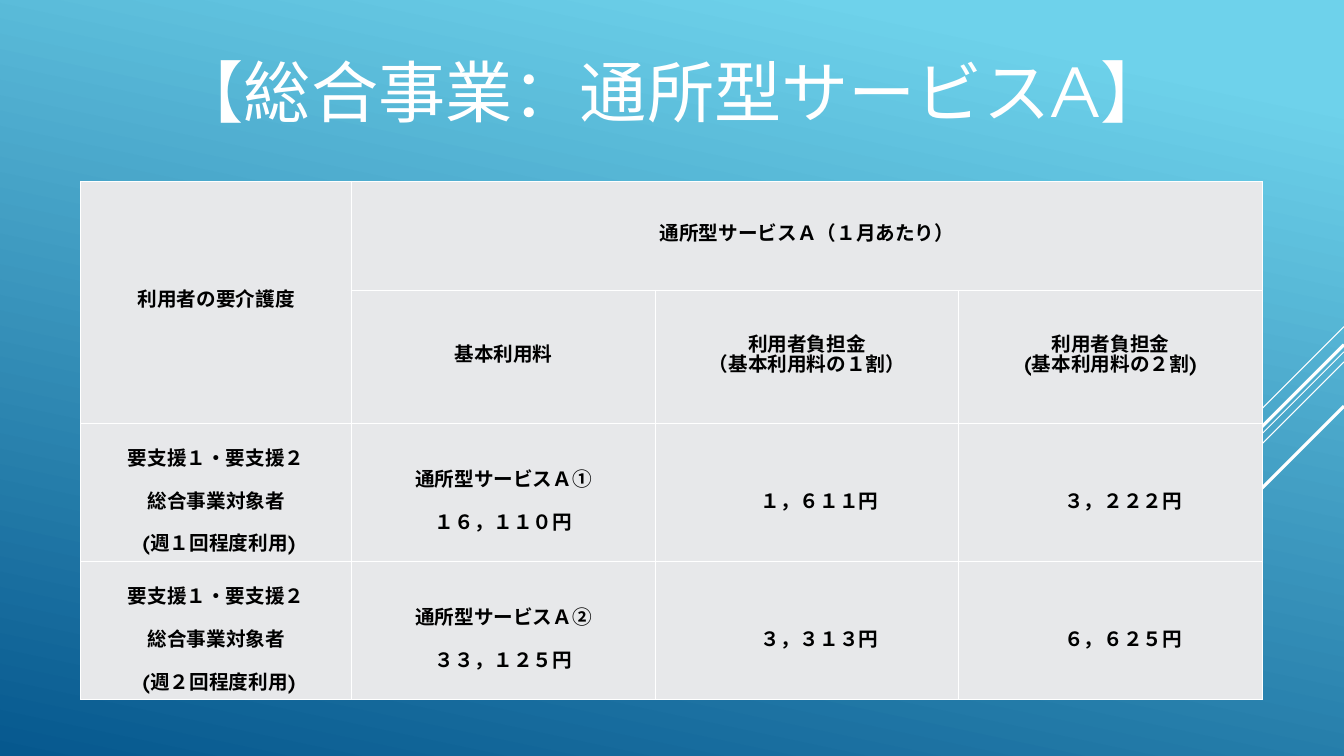
from dataclasses import dataclass

from lxml.etree import SubElement
from pptx import Presentation
from pptx.dml.color import RGBColor
from pptx.enum.shapes import MSO_CONNECTOR
from pptx.enum.text import MSO_ANCHOR, MSO_AUTO_SIZE, PP_ALIGN
from pptx.oxml.ns import qn
from pptx.util import Inches, Pt


@dataclass(frozen=True)
class Theme:
    font: str = "TeX Gyre Adventor"
    sky: str = "6ED2EB"
    ocean: str = "06588E"
    white: str = "FFFFFF"
    ink: str = "000000"
    cell: str = "E7E8EA"
    title_size: float = 48
    table_size: float = 14
    header_leading: float = 14.6
    body_leading: float = 1.5
    border_width: float = 1
    thin: float = 0.75
    thick: float = 2.25


THEME = Theme()
SLIDE_WIDTH, SLIDE_HEIGHT = 13.33, 7.5
COLUMN_WIDTHS = [2.69, 3.01, 3.01, 3.01]
ROW_HEIGHTS = [1.08, 1.32, 1.37, 1.37]
HEADER_ROWS = 2
AMOUNT_COLUMN = 2
CELL_INSET, AMOUNT_INSET = 0.04, 0.29

DIAGONALS = [
    (3.24, 1.00, THEME.thin),
    (3.49, 3.26, THEME.thin),
    (3.59, 2.07, THEME.thin),
    (3.42, 1.91, THEME.thick),
    (4.03, 1.39, THEME.thick),
]

ROWS = [
    ["利用者の要介護度", "通所型サービスＡ（１月あたり）", "", ""],
    ["", "基本利用料", "利用者負担金\n（基本利用料の１割）", "利用者負担金\n(基本利用料の２割)"],
    ["要支援１・要支援２\n総合事業対象者\n (週１回程度利用)", "通所型サービスＡ①\n１６，１１０円", "１，６１１円", "３，２２２円"],
    ["要支援１・要支援２\n総合事業対象者\n (週２回程度利用)", "通所型サービスＡ②\n３３，１２５円", "３，３１３円", "６，６２５円"],
]


def apply_format(target, values):
    for name, value in values.items():
        setattr(target, name, value)


def add_span(para, text, size, color, bold):
    span = para.add_run()
    span.text = text
    apply_format(span.font, {"name": THEME.font, "size": Pt(size), "bold": bold})
    span.font.color.rgb = RGBColor.from_string(color)


def paint_background(page):
    fill = page.background.fill
    fill.gradient()
    fill.gradient_angle = 258
    stops = [(0.1, THEME.sky), (1.0, THEME.ocean)]
    for stop, (position, color) in zip(fill.gradient_stops, stops):
        stop.position = position
        stop.color.rgb = RGBColor.from_string(color)


def add_diagonal(page, top, reach, width):
    line = page.shapes.add_connector(
        MSO_CONNECTOR.STRAIGHT,
        Inches(SLIDE_WIDTH), Inches(top),
        Inches(SLIDE_WIDTH - reach), Inches(top + reach),
    )
    line.line.width = Pt(width)
    line.line.color.rgb = RGBColor.from_string(THEME.white)
    SubElement(line._element.spPr, qn("a:effectLst"))


def format_title(page, text):
    title = page.shapes.title
    apply_format(title, {
        "left": Inches(0), "top": Inches(0),
        "width": Inches(SLIDE_WIDTH), "height": Inches(1.8),
    })
    frame = title.text_frame
    apply_format(frame, {
        "word_wrap": True,
        "auto_size": MSO_AUTO_SIZE.NONE,
        "vertical_anchor": MSO_ANCHOR.MIDDLE,
    })
    para = frame.paragraphs[0]
    para.alignment = PP_ALIGN.CENTER
    add_span(para, text, THEME.title_size, THEME.white, False)


def add_borders(cell):
    properties = cell._tc.get_or_add_tcPr()
    for side in ("lnL", "lnR", "lnT", "lnB"):
        border = SubElement(properties, qn(f"a:{side}"), w=str(Pt(THEME.border_width)))
        fill = SubElement(border, qn("a:solidFill"))
        SubElement(fill, qn("a:srgbClr"), val=THEME.white)


def format_cell(cell, text, leading, left_inset):
    add_borders(cell)
    cell.fill.solid()
    cell.fill.fore_color.rgb = RGBColor.from_string(THEME.cell)
    apply_format(cell, {
        "margin_left": Inches(left_inset), "margin_right": Inches(CELL_INSET),
        "margin_top": 0, "margin_bottom": 0,
        "vertical_anchor": MSO_ANCHOR.MIDDLE,
    })
    if not text:
        return
    frame = cell.text_frame
    for index, line in enumerate(text.split("\n")):
        para = frame.add_paragraph() if index else frame.paragraphs[0]
        apply_format(para, {"alignment": PP_ALIGN.CENTER, "line_spacing": leading})
        add_span(para, line, THEME.table_size, THEME.ink, True)


def add_fee_table(page):
    table = page.shapes.add_table(
        len(ROWS), len(COLUMN_WIDTHS), Inches(0.8), Inches(1.8),
        Inches(sum(COLUMN_WIDTHS)), Inches(sum(ROW_HEIGHTS)),
    ).table
    for column, width in zip(table.columns, COLUMN_WIDTHS):
        column.width = Inches(width)
    for row, height in zip(table.rows, ROW_HEIGHTS):
        row.height = Inches(height)
    table.cell(0, 0).merge(table.cell(1, 0))
    table.cell(0, 1).merge(table.cell(0, 3))
    for row_index, texts in enumerate(ROWS):
        is_header = row_index < HEADER_ROWS
        leading = Pt(THEME.header_leading) if is_header else THEME.body_leading
        for column_index, text in enumerate(texts):
            is_amount = not is_header and column_index >= AMOUNT_COLUMN
            inset = AMOUNT_INSET if is_amount else CELL_INSET
            format_cell(table.cell(row_index, column_index), text, leading, inset)


def main():
    deck = Presentation()
    apply_format(deck, {
        "slide_width": Inches(SLIDE_WIDTH), "slide_height": Inches(SLIDE_HEIGHT),
    })
    page = deck.slides.add_slide(deck.slide_layouts.get_by_name("Title Only"))
    paint_background(page)
    for top, reach, width in DIAGONALS:
        add_diagonal(page, top, reach, width)
    format_title(page, "【総合事業：通所型サービスA】")
    add_fee_table(page)
    deck.save("out.pptx")


if __name__ == "__main__":
    main()
